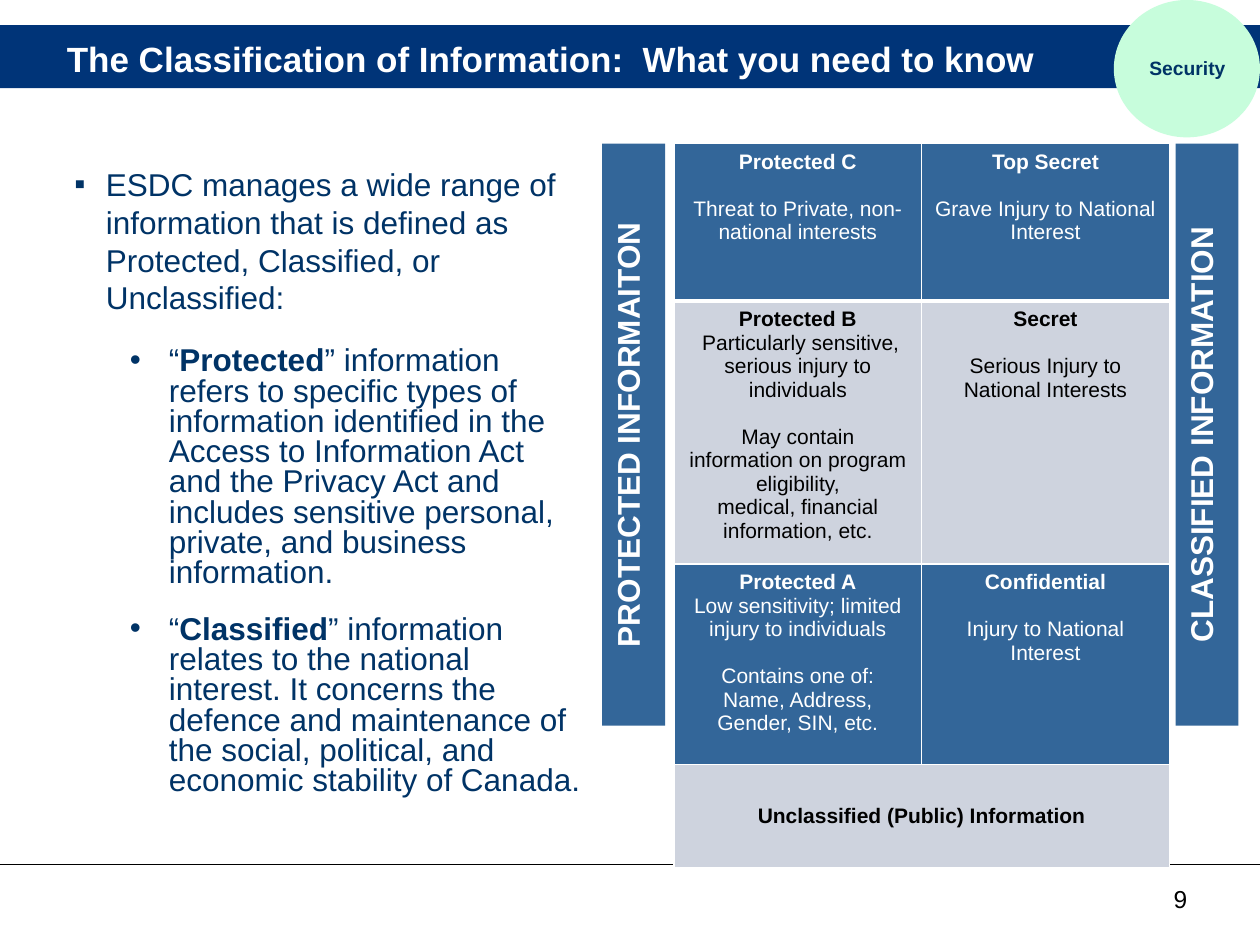
import pptx
import pptx.dml.color
import pptx.enum.shapes
import pptx.enum.text
import pptx.oxml
import pptx.oxml.ns
import pptx.util

RGB = pptx.dml.color.RGBColor
SHAPE = pptx.enum.shapes.MSO_SHAPE
ALIGN = pptx.enum.text.PP_ALIGN
ANCHOR = pptx.enum.text.MSO_ANCHOR
Pt = pptx.util.Pt

WHITE = RGB(0xFF, 0xFF, 0xFF)
BLACK = RGB(0, 0, 0)
BANNER = RGB(0x00, 0x34, 0x78)
NAVY = RGB(0x00, 0x33, 0x66)
STEEL = RGB(0x33, 0x66, 0x99)
SILVER = RGB(0xCE, 0xD3, 0xDE)
MINT = RGB(0xC7, 0xFD, 0xDC)

WIDTH, HEIGHT = pptx.util.Inches(10), pptx.util.Inches(7.5)
COLUMNS, ROWS = 100, 75

POINTS = [
    (0, ["ESDC manages a wide range of information that is defined as "
         "Protected, Classified, or Unclassified:"]),
    (1, ["“", "Protected", "” information refers to specific types of information "
         "identified in the Access to Information Act and the Privacy Act and "
         "includes sensitive personal, private, and business information."]),
    (1, ["“", "Classified", "” information relates to the national interest. "
         "It concerns the defence and maintenance of the social, political, and "
         "economic stability of Canada."]),
]

LEVELS = [
    ([["Protected C"], ["Threat to Private, non-national interests"]],
     [["Top Secret"], ["Grave Injury to National Interest"]]),
    ([["Protected B", " Particularly sensitive, serious injury to individuals"],
      ["May contain information on program eligibility,",
       "medical, financial information, etc."]],
     [["Secret"], ["Serious Injury to National Interests"]]),
    ([["Protected A", "Low sensitivity; limited injury to individuals"],
      ["Contains one of:", "Name, Address, Gender, SIN, etc."]],
     [["Confidential"], ["Injury to National Interest"]]),
    ([["Unclassified (Public) Information"]], []),
]
LEVEL_ROWS = [12.5, 19, 15.9, 8.2]


class Deck:
    font = "Arial"

    def __init__(self):
        self.presentation = pptx.Presentation()
        self.presentation.slide_width, self.presentation.slide_height = WIDTH, HEIGHT
        self.slide = self.presentation.slides.add_slide(self.presentation.slide_layouts[1])
        self.shapes = self.slide.shapes

    def x(self, columns):
        return round(WIDTH * columns / COLUMNS)

    def y(self, rows):
        return round(HEIGHT * rows / ROWS)

    def box(self, left, top, width, height):
        return self.x(left), self.y(top), self.x(width), self.y(height)

    def style(self, paragraph, size, color, bold=False, align=ALIGN.LEFT):
        paragraph.alignment = align
        for run in paragraph.runs:
            run.font.name, run.font.size, run.font.bold = self.font, Pt(size), bold
            run.font.color.rgb = color

    def place(self, holder, area):
        holder.left, holder.top, holder.width, holder.height = self.box(*area)
        return holder.text_frame

    def title(self, area, text):
        frame = self.place(self.shapes.title, area)
        frame.text = text
        frame.vertical_anchor = ANCHOR.MIDDLE
        frame.auto_size = pptx.enum.text.MSO_AUTO_SIZE.NONE
        self.style(frame.paragraphs[0], 20, WHITE, True)

    def bullets(self, area, points):
        frame = self.place(self.slide.placeholders[1], area)
        frame.auto_size = pptx.enum.text.MSO_AUTO_SIZE.NONE
        for index, (level, parts) in enumerate(points):
            paragraph = frame.add_paragraph() if index else frame.paragraphs[0]
            paragraph.level = level
            for part in parts:
                paragraph.add_run().text = part
            self.style(paragraph, 18, NAVY)
            for run in paragraph.runs[1:2]:
                run.font.bold = True
            paragraph.line_spacing = 0.8 if level else 1.0
            paragraph.space_before = Pt(12 if level else 6)
            paragraph.space_after = Pt(3 if level else 6)
            self.mark(paragraph, *((0.75, 0.31, "•") if level else (0.25, 0.25, "▪")))

    def mark(self, paragraph, margin, hanging, symbol):
        properties = paragraph._p.get_or_add_pPr()
        properties.set("marL", str(pptx.util.Inches(margin)))
        properties.set("indent", str(-pptx.util.Inches(hanging)))
        namespace = pptx.oxml.ns.nsdecls("a")
        for xml in (f'<a:buClr {namespace}><a:srgbClr val="{NAVY}"/></a:buClr>',
                    f'<a:buFont {namespace} typeface="{self.font}"/>',
                    f'<a:buChar {namespace} char="{symbol}"/>'):
            properties.append(pptx.oxml.parse_xml(xml))

    def shape(self, kind, area, fill):
        shape = self.shapes.add_shape(kind, *self.box(*area))
        shape.shadow.inherit = False
        shape.fill.solid()
        shape.fill.fore_color.rgb = fill
        shape.line.fill.background()
        return shape

    def banner(self, area):
        band = self.shape(SHAPE.RECTANGLE, area, BANNER)
        self.shapes._spTree.insert(2, band._element)

    def side_label(self, area, text):
        frame = self.shape(SHAPE.RECTANGLE, area, STEEL).text_frame
        frame.text = text
        frame.vertical_anchor = ANCHOR.TOP
        frame._txBody.bodyPr.set("vert", "vert270")
        self.style(frame.paragraphs[0], 18, WHITE, True, ALIGN.CENTER)

    def text(self, area, text, size, color, bold, align):
        frame = self.shapes.add_textbox(*self.box(*area)).text_frame
        frame.word_wrap = True
        frame.vertical_anchor = ANCHOR.MIDDLE
        frame.text = text
        self.style(frame.paragraphs[0], size, color, bold, align)

    def rule(self, row):
        line = self.shapes.add_connector(pptx.enum.shapes.MSO_CONNECTOR.STRAIGHT,
                                         0, self.y(row), WIDTH, self.y(row))
        line.line.color.rgb, line.line.width = BLACK, Pt(0.5)
        line._element.spPr.append(pptx.oxml.parse_xml(
            f'<a:effectLst {pptx.oxml.ns.nsdecls("a")}/>'))

    def table(self, area, levels, heights):
        table = self.shapes.add_table(len(levels), 2, *self.box(*area)).table
        for column in table.columns:
            column.width = self.x(area[2] / 2)
        for index, (level, height) in enumerate(zip(levels, heights)):
            table.rows[index].height = self.y(height)
            fill, color = (SILVER, BLACK) if index % 2 else (STEEL, WHITE)
            for column, groups in enumerate(level):
                cell = table.cell(index, column)
                self.borders(cell, top=3 if index == 1 else 1, bottom=1 if index else 3)
                cell.fill.solid()
                cell.fill.fore_color.rgb = fill
                self.cell_text(cell.text_frame, groups, color)
        last = table.cell(len(levels) - 1, 0)
        last.merge(table.cell(len(levels) - 1, 1))
        last.vertical_anchor = ANCHOR.MIDDLE

    def cell_text(self, frame, groups, color):
        frame.text = "\n".join(line for group in groups for line in group)
        for index, paragraph in enumerate(frame.paragraphs):
            self.style(paragraph, 12, color, index == 0, ALIGN.CENTER)
        for group in groups[1:]:
            frame.paragraphs[len(groups[0])].space_before = Pt(13.5)

    def borders(self, cell, top, bottom):
        for side, width in (("L", 1), ("R", 1), ("T", top), ("B", bottom)):
            cell._tc.get_or_add_tcPr().append(pptx.oxml.parse_xml(
                f'<a:ln{side} {pptx.oxml.ns.nsdecls("a")} w="{Pt(width)}"><a:solidFill>'
                f'<a:srgbClr val="{WHITE}"/></a:solidFill></a:ln{side}>'))


def main():
    deck = Deck()
    deck.banner((0, 2, 100, 5))
    deck.text((74.4, 69.9, 20.8, 2.9), "9", 14, BLACK, False, ALIGN.RIGHT)
    deck.rule(68.6)
    deck.title((4.3, 2.3, 91.3, 4.7),
               "The Classification of Information:  What you need to know")
    deck.bullets((4.9, 12.6, 42.3, 53.5), POINTS)
    deck.shape(SHAPE.OVAL, (88.4, 0, 11.6, 10.9), MINT)
    deck.text((86.6, 3.9, 15.3, 2.9), "Security", 11, NAVY, True, ALIGN.CENTER)
    deck.table((53.5, 11.4, 39.3, sum(LEVEL_ROWS)), LEVELS, LEVEL_ROWS)
    for left, label in ((47.8, "PROTECTED INFORMAITON"), (93.3, "CLASSIFIED INFORMATION")):
        deck.side_label((left, 11.4, 5, 46.2), label)
    deck.presentation.save("out.pptx")


if __name__ == "__main__":
    main()
